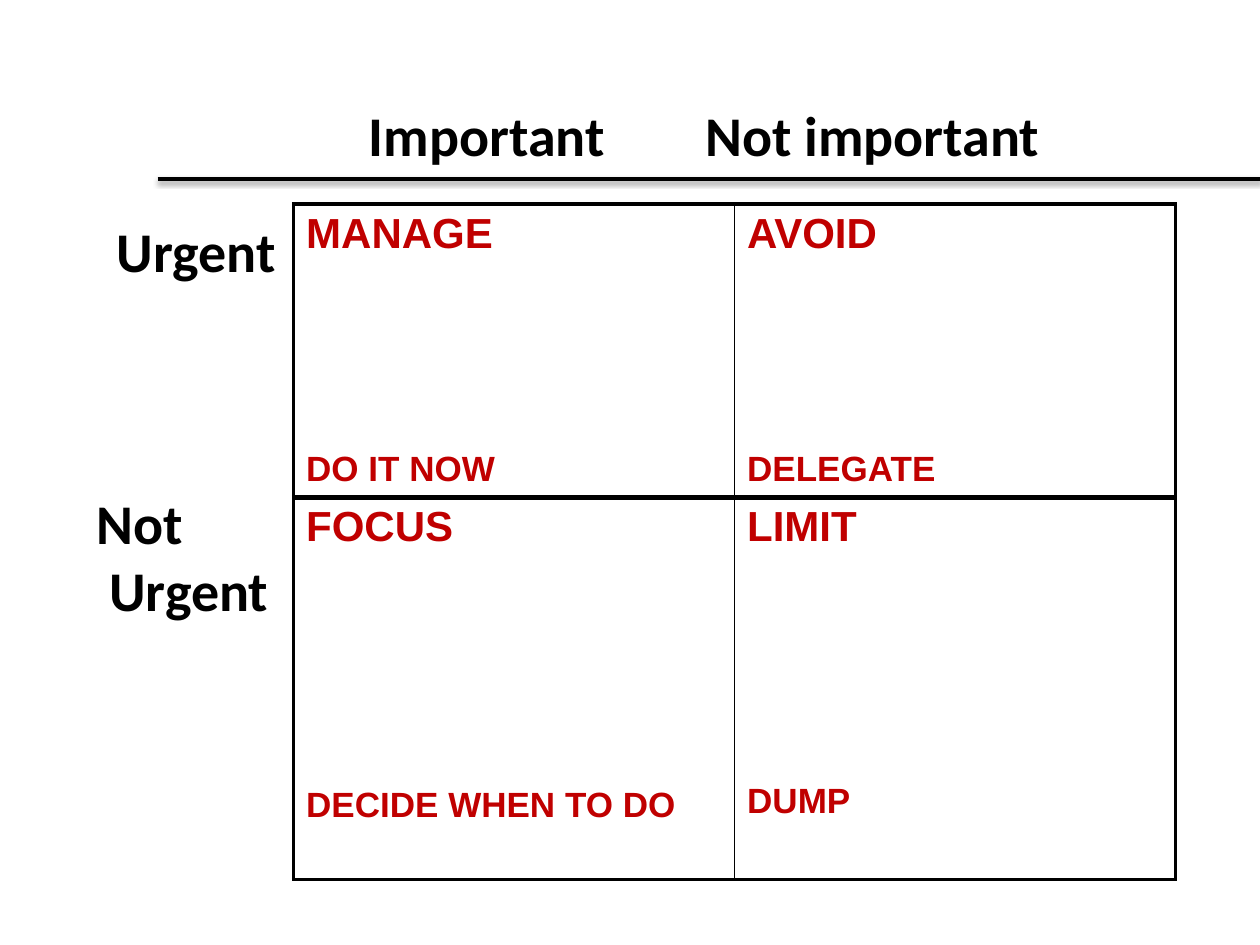
from dataclasses import dataclass

from lxml import etree
from pptx import Presentation, oxml
from pptx import util as u
from pptx.dml.color import RGBColor
from pptx.enum import shapes
from pptx.oxml import ns

BLACK = RGBColor(0x00, 0x00, 0x00)
RED = RGBColor(0xC0, 0x00, 0x00)
THIN, MEDIUM, THICK = 1, 2.25, 3


@dataclass(frozen=True)
class Label:
    lines: tuple
    left: float
    top: float
    width: float
    height: float


@dataclass(frozen=True)
class Quadrant:
    row: int
    column: int
    title: str
    action: str
    gap: float


LABELS = (
    Label(("Important",), 2.83, 0.75, 2.42, 0.63),
    Label(("Not important",), 5.5, 0.75, 3.17, 0.63),
    Label(("Urgent",), 0.83, 1.67, 2.24, 0.63),
    Label(("Not", "Urgent"), 0.67, 3.83, 2.42, 1.18),
)
QUADRANTS = (
    Quadrant(0, 0, "MANAGE", "DO IT NOW", 110),
    Quadrant(0, 1, "AVOID", "DELEGATE", 110),
    Quadrant(1, 0, "FOCUS", "DECIDE WHEN TO DO", 134),
    Quadrant(1, 1, "LIMIT", "DUMP", 132),
)
COLUMN_WIDTH = 3.5
ROW_HEIGHTS = (2.33, 3.03)


def write(frame, index: int, text: str, *, font: str, size: float,
          color: RGBColor, before: float = 0, indent: float = 0) -> None:
    para = frame.paragraphs[0] if index == 0 else frame.add_paragraph()
    if before:
        para.space_before = u.Pt(before)
    if indent:
        para._p.get_or_add_pPr().set("marL", str(u.Inches(indent)))
    span = para.add_run()
    span.text = text
    span.font.name = font
    span.font.size = u.Pt(size)
    span.font.bold = True
    span.font.color.rgb = color


def draw_label(page, label: Label) -> None:
    box = page.shapes.add_textbox(u.Inches(label.left), u.Inches(label.top),
                                  u.Inches(label.width), u.Inches(label.height))
    box.text_frame.word_wrap = True
    for index, line in enumerate(label.lines):
        write(box.text_frame, index, line, font="Calibri", size=32,
              color=BLACK, indent=0.1 * index)


def draw_rule(page) -> None:
    rule = page.shapes.add_connector(shapes.MSO_CONNECTOR.STRAIGHT, u.Inches(1.25),
                                     u.Inches(1.42), u.Inches(10), u.Inches(1.42))
    rule.line.color.rgb = BLACK
    rule.line.width = u.Pt(2)
    rule._element.spPr.append(oxml.parse_xml(
        f'<a:effectLst {ns.nsdecls("a")}>'
        f'<a:outerShdw blurRad="{u.Pt(3.1)}" dist="{u.Pt(1.6)}" dir="5400000">'
        f'<a:srgbClr val="{BLACK}"><a:alpha val="38000"/></a:srgbClr>'
        '</a:outerShdw></a:effectLst>'))


def set_border(cell, side: str, width: float) -> None:
    line = etree.SubElement(cell._tc.get_or_add_tcPr(), ns.qn(f"a:ln{side}"),
                            w=str(u.Pt(width)))
    fill = etree.SubElement(line, ns.qn("a:solidFill"))
    etree.SubElement(fill, ns.qn("a:srgbClr"), val=str(BLACK))


def fill_quadrant(table, quadrant: Quadrant) -> None:
    cell = table.cell(quadrant.row, quadrant.column)
    widths = {
        "L": THIN if quadrant.column else MEDIUM,
        "R": MEDIUM if quadrant.column else THIN,
        "T": THICK if quadrant.row else MEDIUM,
        "B": MEDIUM if quadrant.row else THICK,
    }
    for side, width in widths.items():
        set_border(cell, side, width)
    cell.fill.background()
    write(cell.text_frame, 0, quadrant.title, font="Arial", size=24, color=RED)
    write(cell.text_frame, 1, quadrant.action, font="Arial", size=20, color=RED,
          before=quadrant.gap)


def draw_matrix(page) -> None:
    table = page.shapes.add_table(2, 2, u.Inches(2.33), u.Inches(1.62),
                                  u.Inches(2 * COLUMN_WIDTH),
                                  u.Inches(sum(ROW_HEIGHTS))).table
    table.first_row = False
    table.horz_banding = False
    for column in table.columns:
        column.width = u.Inches(COLUMN_WIDTH)
    for row, height in zip(table.rows, ROW_HEIGHTS):
        row.height = u.Inches(height)
    for quadrant in QUADRANTS:
        fill_quadrant(table, quadrant)


def main() -> None:
    deck = Presentation()
    deck.slide_width = u.Inches(10)
    deck.slide_height = u.Inches(7.5)
    page = deck.slides.add_slide(deck.slide_layouts[6])
    draw_rule(page)
    draw_matrix(page)
    for label in LABELS:
        draw_label(page, label)
    deck.save("out.pptx")


if __name__ == "__main__":
    main()
